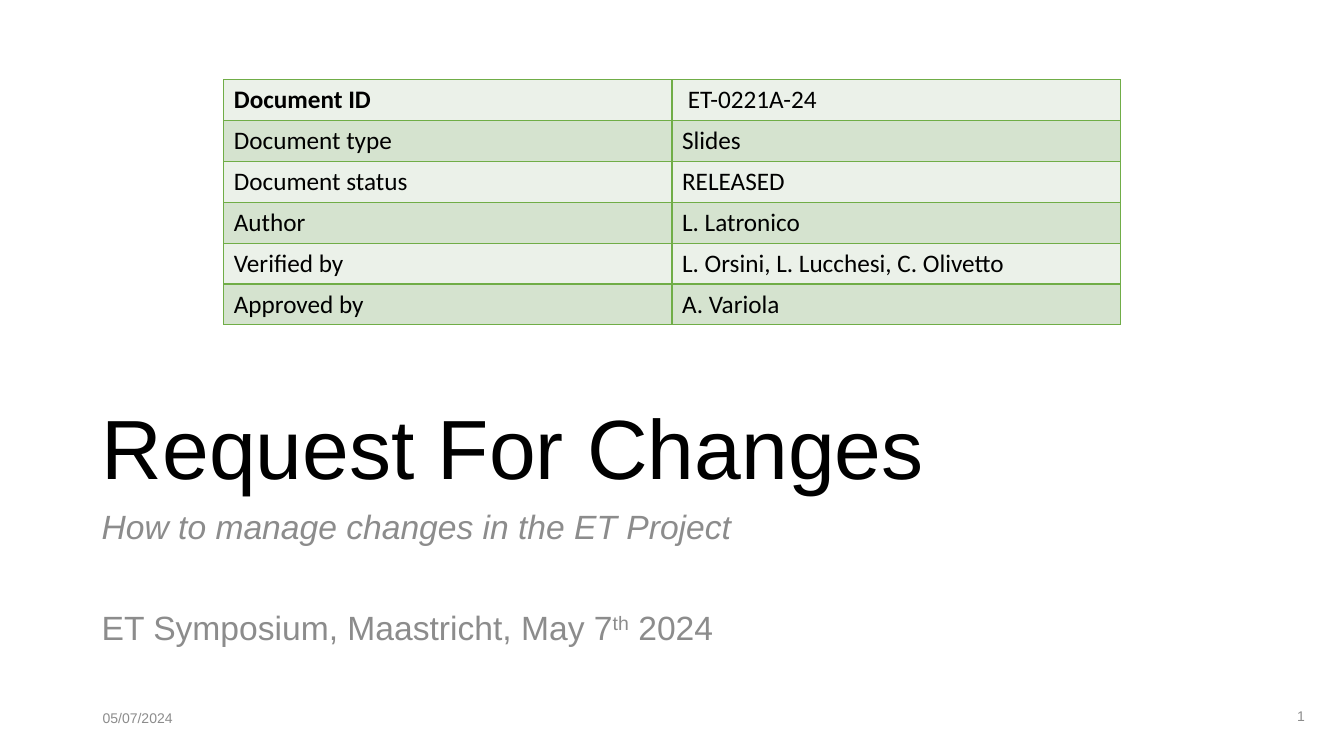
from lxml import etree
from pptx import Presentation
from pptx.dml.color import RGBColor
from pptx.enum.text import MSO_ANCHOR, MSO_AUTO_SIZE, PP_ALIGN
from pptx.oxml.ns import qn
from pptx.util import Inches, Pt

LEFT, RIGHT = PP_ALIGN.LEFT, PP_ALIGN.RIGHT
TOP, MIDDLE, BOTTOM = MSO_ANCHOR.TOP, MSO_ANCHOR.MIDDLE, MSO_ANCHOR.BOTTOM
NO_AUTOFIT = MSO_AUTO_SIZE.NONE

BLACK = RGBColor(0x00, 0x00, 0x00)
GREY = RGBColor(0x8C, 0x8C, 0x8C)
BORDER_GREEN = RGBColor(0x70, 0xAD, 0x47)
BAND_COLORS = (RGBColor(0xEB, 0xF1, 0xE9), RGBColor(0xD5, 0xE3, 0xCF))

TITLE_ONLY = 5
DOCUMENT_ROWS = [
    ("Document ID", " ET-0221A-24"),
    ("Document type", "Slides"),
    ("Document status", "RELEASED"),
    ("Author", "L. Latronico"),
    ("Verified by", "L. Orsini, L. Lucchesi, C. Olivetto"),
    ("Approved by", "A. Variola"),
]


def add_run(paragraph, text, size, color, font="Arial", bold=False, italic=False):
    run = paragraph.add_run()
    run.text = text
    run.font.name = font
    run.font.size = Pt(size)
    run.font.bold = bold
    run.font.italic = italic
    run.font.color.rgb = color
    return run


def prepare_frame(shape, anchor):
    frame = shape.text_frame
    frame.word_wrap = True
    frame.auto_size = NO_AUTOFIT
    frame.vertical_anchor = anchor
    return frame


def add_text_box(slide, left, top, width, height, anchor):
    box = slide.shapes.add_textbox(
        Inches(left), Inches(top), Inches(width), Inches(height))
    return prepare_frame(box, anchor)


def set_borders(cell, color, width):
    """Draw all four sides of a cell; the lines must precede the fill."""
    properties = cell._tc.get_or_add_tcPr()
    for position, side in enumerate(("a:lnL", "a:lnR", "a:lnT", "a:lnB")):
        line = etree.Element(qn(side), w=str(Pt(width)))
        fill = etree.SubElement(line, qn("a:solidFill"))
        etree.SubElement(fill, qn("a:srgbClr"), val=str(color))
        properties.insert(position, line)


def add_document_table(slide, left, top, width, height):
    row_count, column_count = len(DOCUMENT_ROWS), len(DOCUMENT_ROWS[0])
    table = slide.shapes.add_table(
        row_count, column_count,
        Inches(left), Inches(top), Inches(width), Inches(height)).table
    for row_index, texts in enumerate(DOCUMENT_ROWS):
        for column_index, text in enumerate(texts):
            cell = table.cell(row_index, column_index)
            cell.fill.solid()
            cell.fill.fore_color.rgb = BAND_COLORS[row_index % 2]
            set_borders(cell, BORDER_GREEN, 1)
            is_heading = row_index == 0 and column_index == 0
            add_run(cell.text_frame.paragraphs[0], text, 18, BLACK,
                    font="Calibri", bold=is_heading)


def place_title(slide, left, top, width, height):
    title = slide.shapes.title
    title.left, title.top = Inches(left), Inches(top)
    title.width, title.height = Inches(width), Inches(height)
    paragraph = prepare_frame(title, BOTTOM).paragraphs[0]
    paragraph.alignment = LEFT
    paragraph.line_spacing = 0.9
    add_run(paragraph, "Request For Changes", 60, BLACK)


def add_subtitle(slide, left, top, width, height):
    frame = add_text_box(slide, left, top, width, height, TOP)
    topic = frame.paragraphs[0]
    topic.line_spacing = 0.9
    add_run(topic, "How to manage changes in the ET Project", 24, GREY, italic=True)

    event = frame.add_paragraph()
    event.line_spacing = 0.9
    event.space_before = Pt(46)
    add_run(event, "ET Symposium, Maastricht, May 7", 24, GREY)
    ordinal = add_run(event, "th", 24, GREY)
    ordinal.font._element.set("baseline", "30000")
    add_run(event, " 2024", 24, GREY)


def add_footer_text(slide, text, left, top, width, height, alignment):
    paragraph = add_text_box(slide, left, top, width, height, MIDDLE).paragraphs[0]
    paragraph.alignment = alignment
    add_run(paragraph, text, 10, GREY)


def main():
    presentation = Presentation()
    presentation.slide_width = Inches(13.33)
    presentation.slide_height = Inches(7.5)
    slide = presentation.slides.add_slide(presentation.slide_layouts[TITLE_ONLY])
    place_title(slide, 0.91, 1.87, 11.5, 3.12)
    add_subtitle(slide, 0.91, 5.02, 11.5, 1.64)
    add_footer_text(slide, "05/07/2024", 0.92, 6.92, 1.39, 0.4, LEFT)
    add_footer_text(slide, "1", 10, 6.91, 3.04, 0.38, RIGHT)
    add_document_table(slide, 2.22, 0.79, 8.89, 2.43)
    presentation.save("out.pptx")


if __name__ == "__main__":
    main()
